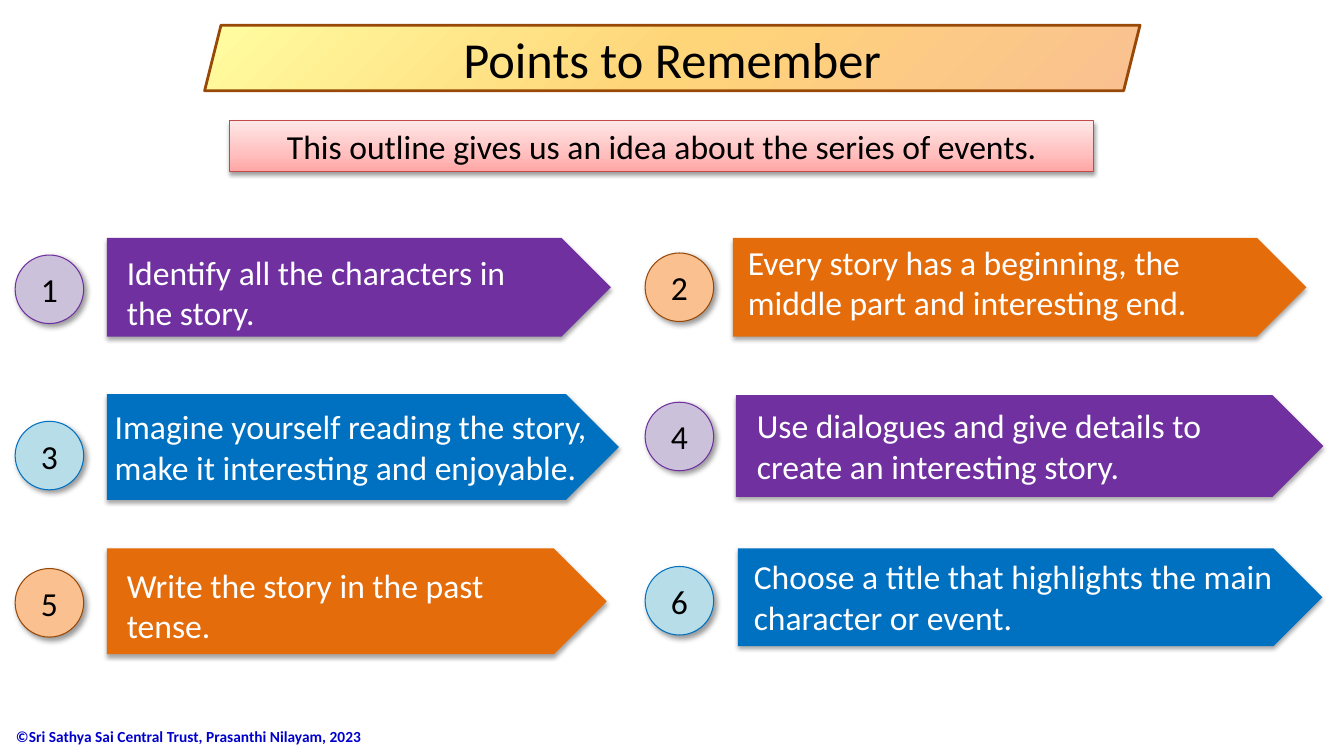
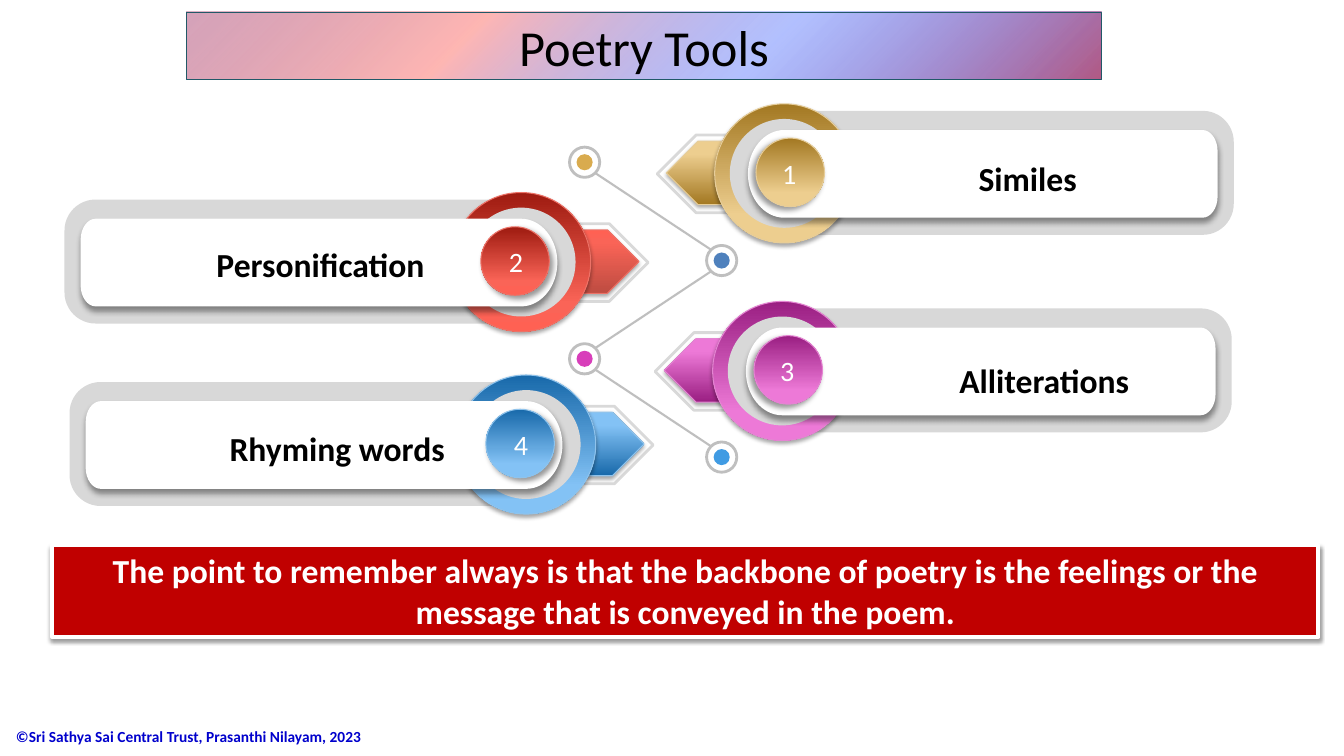
from dataclasses import dataclass
from itertools import pairwise
from math import copysign

from lxml.etree import SubElement as Sub
from pptx import Presentation
from pptx.dml.color import RGBColor
from pptx.enum.shapes import MSO_CONNECTOR as Link, MSO_SHAPE as Kind
from pptx.enum.text import MSO_ANCHOR as Anchor, MSO_AUTO_SIZE as Auto, PP_ALIGN as Align
from pptx.oxml.ns import qn
from pptx.util import Inches, Pt

Box = tuple[float, float, float, float]

# Shared look
FONT = "Calibri"
BLACK, WHITE, GREY, PALE = "000000", "FFFFFF", "BFBFBF", "D8D8D8"
NOTICE = "©Sri Sathya Sai Central Trust, Prasanthi Nilayam, 2023"


@dataclass(frozen=True)
class Shade:
    """Opacity %, blur pt, distance pt, angle."""
    alpha: int
    blur: float
    dist: float
    angle: int


@dataclass(frozen=True)
class Blend:
    """Stops are (position %, colour, opacity %); focus is a corner: l, t, r, b."""
    stops: tuple[tuple[int, str, int], ...]
    angle: int = 270
    focus: str = ""


@dataclass(frozen=True)
class Tone:
    tint: str
    edge: str
    fill: str


@dataclass(frozen=True)
class Point:
    text: str
    tone: Tone
    badge: float
    arrow: Box
    words: Box


@dataclass(frozen=True)
class Card:
    num: str
    label: str
    x: float
    y: float
    words: Box
    tail: float
    dark: str
    light: str
    last: str
    edge: str
    tip: str
    left: bool = False


BAND = Shade(38, 3.1, 1.6, 90)
SOFT = Shade(35, 3.1, 1.8, 90)
DROP = Shade(40, 4, 3, 90)
SLANT = Shade(40, 4, 3, 45)
SLANT_L = Shade(40, 4, 3, 135)

VIOLET = Tone("CCC1DA", "7030A0", "7030A0")
AMBER = Tone("FAC090", "984807", "E46C0A")
BLUE = Tone("B7DEE8", "0070C0", "0070C0")

POINTS = (
    Point("Identify all the characters in the story.", VIOLET, 2.53,
          (1.06, 2.36, 5, 0.98), (1.16, 2.45, 4.36, 0.91)),
    Point("Every story has a beginning, the middle part and interesting end.", AMBER, 2.51,
          (7.27, 2.36, 5.69, 0.98), (7.32, 2.35, 4.92, 0.91)),
    Point("Imagine yourself reading the story, make it interesting and enjoyable.", BLUE, 4.18,
          (1.06, 3.91, 5.08, 1.05), (1.04, 3.98, 5, 0.91)),
    Point("Use dialogues and give details to\ncreate an interesting story.", VIOLET, 3.99,
          (7.3, 3.92, 5.83, 1.01), (7.41, 3.97, 5.69, 0.91)),
    Point("Write the story in the past tense.", AMBER, 5.64,
          (1.06, 5.44, 4.96, 1.05), (1.16, 5.55, 4.34, 0.91)),
    Point("Choose a title that highlights the main character or event.", BLUE, 5.62,
          (7.32, 5.44, 5.8, 0.97), (7.38, 5.47, 5.48, 0.91)),
)

CARDS = (
    Card("1", "Similes", 7.09, 1.03, (8.29, 1.52, 3.81, 0.5), 1.01,
         "A37822", "EDCE8F", "F0D08E", "E6CD9A", "A37822"),
    Card("2", "Personification", 4.48, 1.91, (1.26, 2.37, 3.84, 0.5), 1.03,
         "9E1B10", "FA6457", "FF6153", "ED7267", "BE4C41", left=True),
    Card("4", "Rhyming words", 4.53, 3.72, (2.03, 4.2, 2.63, 0.5), 1.09,
         "1869AA", "83C2F5", "81C3F8", "8FC3EC", "1869AA", left=True),
    Card("3", "Alliterations", 7.07, 2.99, (9.1, 3.52, 2.52, 0.5), 1,
         "9A1F82", "ED79D7", "F078D9", "E485D2", "9A1F82"),
)


def rgb(code: str) -> RGBColor:
    return RGBColor.from_string(code)


def tint(parent, code: str, alpha: int = 100) -> None:
    node = Sub(parent, qn("a:srgbClr"), val=str(rgb(code)))
    if alpha < 100:
        Sub(node, qn("a:alpha"), val=str(alpha * 1000))


def write(shape, text: str, *, size: float = 24, color: str = BLACK, bold: bool = False,
          align=Align.CENTER, anchor=Anchor.TOP) -> None:
    frame = shape.text_frame
    frame.text = text
    frame.word_wrap = True
    frame.auto_size = Auto.NONE
    frame.vertical_anchor = anchor
    for para in frame.paragraphs:
        para.alignment = align
        font = para.font
        font.name, font.size, font.bold = FONT, Pt(size), bold
        font.color.rgb = rgb(color)


def note(slide, box: Box, text: str, **style):
    shape = slide.shapes.add_textbox(*map(Inches, box))
    write(shape, text, **style)
    return shape


def paint(shape, fill: str | Blend | None, line: str = "", width: float = 0.75,
          shade: Shade | None = None) -> None:
    props = shape.element.spPr
    if isinstance(fill, Blend):
        grad = Sub(props, qn("a:gradFill"), rotWithShape="1")
        stops = Sub(grad, qn("a:gsLst"))
        for pos, code, alpha in fill.stops:
            tint(Sub(stops, qn("a:gs"), pos=str(pos * 1000)), code, alpha)
        if fill.focus:
            path = Sub(grad, qn("a:path"), path="circle")
            Sub(path, qn("a:fillToRect"), {side: "100000" for side in fill.focus})
        else:
            Sub(grad, qn("a:lin"), ang=str(fill.angle * 60000), scaled="0")
    elif fill:
        shape.fill.solid()
        shape.fill.fore_color.rgb = rgb(fill)
    else:
        shape.fill.background()
    if line:
        shape.line.color.rgb = rgb(line)
        shape.line.width = Pt(width)
    else:
        shape.line.fill.background()
    shape.shadow.inherit = False
    if shade:
        cast = Sub(props.find(qn("a:effectLst")), qn("a:outerShdw"),
                   blurRad=str(Pt(shade.blur)), dist=str(Pt(shade.dist)),
                   dir=str(shade.angle * 60000), rotWithShape="0")
        tint(cast, BLACK, shade.alpha)


def draw(slide, kind, box: Box, fill: str | Blend | None, *, flip: bool = False, **style):
    shape = slide.shapes.add_shape(kind, *map(Inches, box))
    paint(shape, fill, **style)
    if flip:
        shape.element.spPr.find(qn("a:xfrm")).set("flipH", "1")
    return shape


def head(shape, text: str) -> None:
    write(shape, text, size=36, anchor=Anchor.MIDDLE)


def foot(slide, master) -> None:
    """Place the notice on the master, so that every slide shows it."""
    box = note(slide, (0.06, 7.1, 3.81, 0.41), NOTICE, size=11, color="0000CC", bold=True,
               align=Align.LEFT, anchor=Anchor.MIDDLE)
    master.element.cSld.spTree.append(box.element)


def point(slide, num: int, item: Point) -> None:
    x = 0.15 if num % 2 else 6.4
    badge = draw(slide, Kind.OVAL, (x, item.badge, 0.68, 0.68), item.tone.tint,
                 line=item.tone.edge, shade=SLANT)
    write(badge, str(num), anchor=Anchor.MIDDLE)
    draw(slide, Kind.PENTAGON, item.arrow, item.tone.fill, shade=SOFT)
    note(slide, item.words, item.text, color=WHITE, align=Align.LEFT)


def plate(slide, box: Box, flip: bool) -> None:
    """White plate: one end round, the other with small corners."""
    x, y, w, h = box
    end, mid = 0.36, h / 2
    rx, ry = 0.15, 0.21
    kx, ky = rx * 0.45, ry * 0.45
    ex, ey = end * 0.45, mid * 0.45
    rim = ((end, 0), (w - rx, 0),
           (w - kx, 0), (w, ky), (w, ry), (w, h - ry),
           (w, h - ky), (w - kx, h), (w - rx, h), (end, h),
           (ex, h), (0, h - ey), (0, mid),
           (0, ey), (ex, 0), (end, 0))
    spots = [(Inches(x + (w - px if flip else px)), Inches(y + py)) for px, py in rim]
    pen = slide.shapes.build_freeform(*spots[0])
    pen.add_line_segments(spots[1:], close=True)
    shape = pen.convert_to_shape()
    # Turn each corner's three points into one curve
    steps = list(shape.element.spPr.iter(qn("a:lnTo")))
    for first in (1, 5, 9, 12):
        trio = steps[first:first + 3]
        curve = Sub(trio[0].getparent(), qn("a:cubicBezTo"))
        trio[0].addprevious(curve)
        for step in trio:
            curve.append(step[0])
            step.getparent().remove(step)
    paint(shape, WHITE, shade=DROP)


def card(slide, item: Card) -> None:
    ring = 1.38
    wide = 4.94 if item.left else 4.87

    def spot(dx: float, dy: float, w: float, h: float) -> Box:
        x = item.x + (ring - dx - w if item.left else dx)
        return x, item.y + dy, w, h

    def fade(dark: str, angle: int) -> Blend:
        return Blend(((0, dark, 100), (80, item.light, 100), (100, item.last, 100)), angle)

    ball = fade(item.dark, 90)
    aim = not item.left
    draw(slide, Kind.PENTAGON, spot(-0.57, 0.31, item.tail, 0.77), None, flip=aim,
         line="D9D9D9", width=2)
    panel = draw(slide, Kind.ROUNDED_RECTANGLE, spot(0.28, 0.07, wide, 1.23), PALE)
    panel.adjustments[0] = 0.25
    draw(slide, Kind.PENTAGON, spot(-0.48, 0.37, 0.99, 0.63), fade(item.tip, 270), flip=aim,
         line=item.edge, shade=SOFT)
    draw(slide, Kind.OVAL, spot(0, 0, ring, ring), ball, line=item.edge, shade=SOFT)
    draw(slide, Kind.OVAL, spot(0.15, 0.15, 1.08, 1.08), PALE)
    plate(slide, spot(0.33, 0.26, wide - 0.21, 0.87), item.left)
    draw(slide, Kind.OVAL, spot(0.41, 0.34, 0.68, 0.68), ball, line=item.edge,
         shade=SLANT if item.left else SLANT_L)
    note(slide, item.words, item.label, bold=True)
    note(slide, spot(0.57, 0.47, 0.34, 0.44), item.num, size=20, color=WHITE)


def trail(slide) -> None:
    """Zigzag of four dots with lines between them."""
    hues = ("D9AB4E", "4F81BD", "D83EBA", "409BE3")
    nodes = [(7.16 if i % 2 else 5.8, 1.61 + i * 0.975) for i in range(len(hues))]
    for (x, y), hue in zip(nodes, hues):
        draw(slide, Kind.OVAL, (x - 0.15, y - 0.15, 0.3, 0.3), WHITE, line=GREY, width=2)
        draw(slide, Kind.OVAL, (x - 0.08, y - 0.08, 0.16, 0.16), hue)
    for (ax, ay), (bx, by) in pairwise(nodes):
        dx = copysign(0.11, bx - ax)
        ends = (ax + dx, ay + 0.11, bx - dx, by - 0.11)
        line = slide.shapes.add_connector(Link.STRAIGHT, *map(Inches, ends))
        line.line.color.rgb = rgb(GREY)
        line.line.width = Pt(1.5)
        Sub(line.element.spPr, qn("a:effectLst"))


def main() -> None:
    deck = Presentation()
    deck.slide_width, deck.slide_height = Inches(40 / 3), Inches(7.5)
    bare, titled = deck.slide_layouts[6], deck.slide_layouts[5]

    # Slide 1: six points, under a slanted title band
    slide = deck.slides.add_slide(bare)
    foot(slide, deck.slide_master)
    gold = Blend(((0, "FFFDA0", 100), (50, "FFD579", 100), (100, "FAC090", 100)), focus="rb")
    head(draw(slide, Kind.PARALLELOGRAM, (2.03, 0.25, 9.28, 0.65), gold,
              line="984807", width=2), "Points to Remember")
    pink = Blend(((0, "FFA6A5", 100), (35, "FFC0BF", 100), (100, "FFE7E7", 100)))
    intro = draw(slide, Kind.RECTANGLE, (2.28, 1.2, 8.57, 0.5), pink, line="BF4C48", shade=BAND)
    write(intro, "This outline gives us an idea about the series of events.")
    for num, item in enumerate(POINTS, 1):
        point(slide, num, item)

    # Slide 2: four tools
    slide = deck.slides.add_slide(titled)
    dusk = Blend(((0, "941651", 71), (37, "0432FF", 30), (69, "FF7E79", 56),
                  (100, "941651", 39)), focus="lt")
    title = slide.shapes.title
    title.left, title.top, title.width, title.height = map(Inches, (1.85, 0.12, 9.08, 0.67))
    paint(title, dusk, "215968")
    head(title, "Poetry Tools")
    trail(slide)
    for item in CARDS:
        card(slide, item)
    moral = draw(slide, Kind.RECTANGLE, (0.52, 5.41, 12.56, 0.91), "C00000",
                 line=WHITE, width=3, shade=BAND)
    write(moral, "The point to remember always is that the backbone of poetry is the feelings "
          "or the message that is conveyed in the poem.", color=WHITE, bold=True)

    deck.save("out.pptx")


if __name__ == "__main__":
    main()
